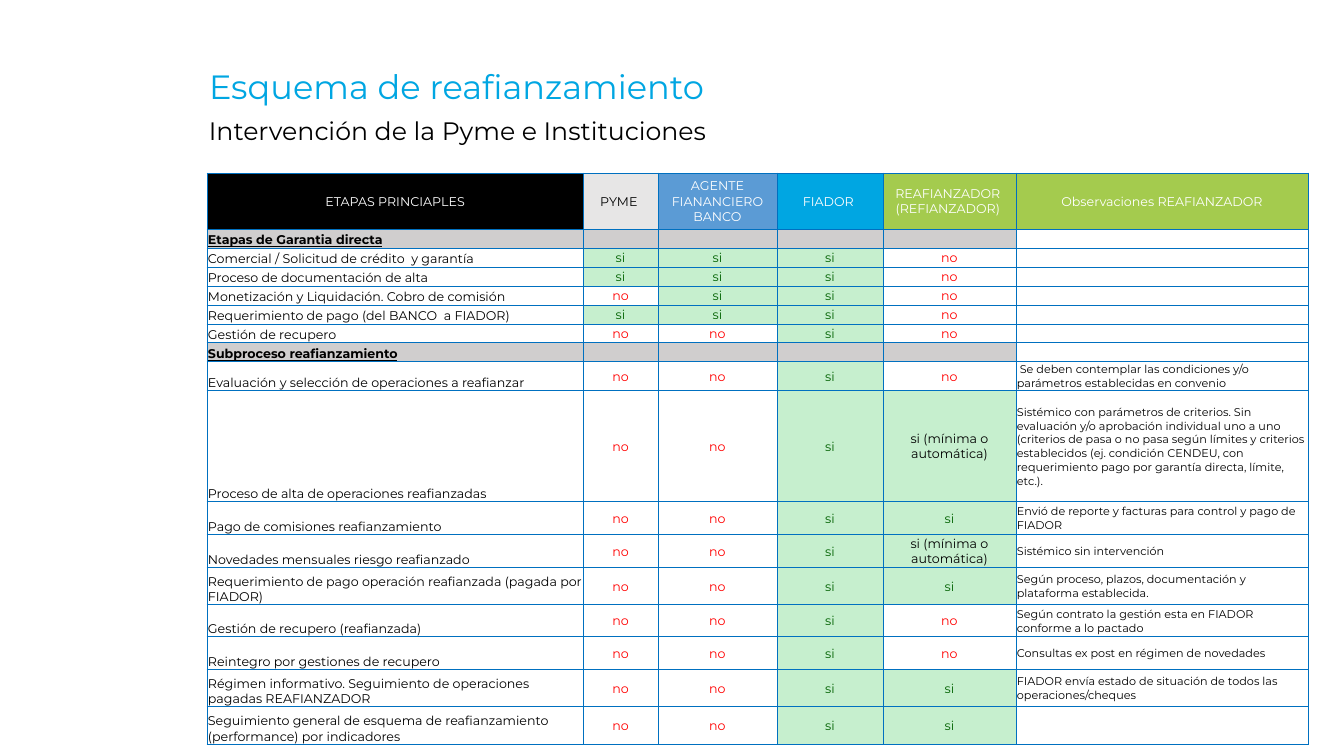
"""Build the slide on the counter-guarantee scheme."""
from dataclasses import dataclass

from lxml import etree
from pptx import Presentation
from pptx.dml.color import RGBColor
from pptx.enum import text as et
from pptx.oxml import ns
from pptx.util import Emu, Pt

SCALE = 914400 / 100.8


@dataclass(frozen=True)
class Theme:
    """Colours, type sizes and font of the slide."""
    face: str = "Montserrat"
    black: str = "000000"
    white: str = "FFFFFF"
    cyan: str = "00A6E2"
    blue: str = "5B9BD5"
    lime: str = "A4CB4E"
    pale: str = "E7E6E6"
    gray: str = "D0CECE"
    mint: str = "C6EFCE"
    green: str = "006100"
    red: str = "FF0000"
    edge: str = "0070C0"
    title: int = 24
    lead: int = 18
    body: int = 9
    note: int = 8


T = Theme()
MID, LOW = et.MSO_ANCHOR.MIDDLE, et.MSO_ANCHOR.BOTTOM
WIDTHS = [376, 75, 119, 106, 133, 292]
HEIGHTS = [56] + [19] * 7 + [29, 111, 33, 33, 37, 32, 33, 37, 38]
HEADS = [
    ("ETAPAS PRINCIAPLES", T.black, T.white),
    ("PYME ", T.pale, T.black),
    ("AGENTE FIANANCIERO BANCO", T.blue, T.white),
    ("FIADOR ", T.cyan, T.white),
    ("REAFIANZADOR  (REFIANZADOR) ", T.lime, T.white),
    ("Observaciones REAFIANZADOR", T.lime, T.white),
]
PART = "si (mínima o automática)"
STAGES = [
    ("Etapas de Garantia directa", None, ""),
    ("Comercial / Solicitud de crédito  y garantía", ["si", "si", "si", "no"], ""),
    ("Proceso de documentación de alta", ["si", "si", "si", "no"], ""),
    ("Monetización y Liquidación. Cobro de comisión", ["no", "si", "si", "no"], ""),
    ("Requerimiento de pago (del BANCO  a FIADOR)", ["si", "si", "si", "no"], ""),
    ("Gestión de recupero", ["no", "no", "si", "no"], ""),
    ("Subproceso reafianzamiento", None, ""),
    ("Evaluación y selección de operaciones a reafianzar", ["no", "no", "si", "no"],
     " Se deben contemplar las condiciones y/o parámetros establecidas en convenio"),
    ("Proceso de alta de operaciones reafianzadas", ["no", "no", "si", PART],
     "Sistémico con parámetros de criterios. Sin evaluación y/o aprobación individual "
     "uno a uno (criterios de pasa o no pasa según límites y criterios establecidos "
     "(ej. condición CENDEU, con requerimiento pago por garantía directa, límite, etc.)."),
    ("Pago de comisiones reafianzamiento", ["no", "no", "si", "si"],
     "Envió de reporte y facturas para control y pago de FIADOR"),
    ("Novedades mensuales riesgo reafianzado", ["no", "no", "si", PART],
     "Sistémico sin intervención"),
    ("Requerimiento de pago operación reafianzada (pagada por FIADOR)",
     ["no", "no", "si", "si"],
     "Según proceso, plazos, documentación y plataforma establecida."),
    ("Gestión de recupero (reafianzada)", ["no", "no", "si", "no"],
     "Según contrato la gestión esta en FIADOR conforme a lo pactado"),
    ("Reintegro por gestiones de recupero", ["no", "no", "si", "no"],
     "Consultas ex post en régimen de novedades"),
    ("Régimen informativo. Seguimiento de operaciones pagadas REAFIANZADOR",
     ["no", "no", "si", "si"],
     "FIADOR envía estado de situación de todos las operaciones/cheques"),
    ("Seguimiento general de esquema de reafianzamiento (performance) por indicadores",
     ["no", "no", "si", "si"], ""),
]


def px(num):
    """Turn pixels into EMU."""
    return Emu(round(num * SCALE))


def write(frame, words, size=T.body, color=T.black, bold=False, center=False):
    """Put one formatted paragraph into a text frame."""
    para = frame.paragraphs[0]
    para.alignment = et.PP_ALIGN.CENTER if center else et.PP_ALIGN.LEFT
    if not words:
        end = etree.SubElement(para._p, ns.qn("a:endParaRPr"))
        end.set("sz", str(size * 100))
        return
    run = para.add_run()
    run.text = words
    font = run.font
    font.name, font.size, font.bold, font.underline = T.face, Pt(size), bold, bold
    font.color.rgb = RGBColor.from_string(color)


def place(shape, left, top, width, height):
    """Move a text shape and anchor its wrapped text at the top."""
    shape.left, shape.top, shape.width, shape.height = map(px, (left, top, width, height))
    frame = shape.text_frame
    frame.word_wrap = True
    frame.vertical_anchor = et.MSO_ANCHOR.TOP
    return frame


def edge(cell):
    """Draw thin lines on the four sides of a cell."""
    props = cell._tc.get_or_add_tcPr()
    for side in ("lnL", "lnR", "lnT", "lnB"):
        line = etree.SubElement(props, ns.qn("a:" + side), w=str(Pt(0.5)))
        fill = etree.SubElement(line, ns.qn("a:solidFill"))
        etree.SubElement(fill, ns.qn("a:srgbClr"), val=T.edge)


def fill_cell(cell, words="", fill=None, anchor=MID, **style):
    """Set the text, margins, lines and fill of a cell."""
    cell.margin_left = cell.margin_right = cell.margin_top = px(1)
    cell.margin_bottom = 0
    cell.vertical_anchor = anchor
    edge(cell)
    if fill:
        cell.fill.solid()
        cell.fill.fore_color.rgb = RGBColor.from_string(fill)
    else:
        cell.fill.background()
    write(cell.text_frame, words, **style)


def mark(cell, words):
    """Colour a cell by its yes or no."""
    color = {"si": T.green, "no": T.red}.get(words, T.black)
    fill = None if words == "no" else T.mint
    fill_cell(cell, words, fill, color=color, center=True)


def fill_row(cells, name, marks, note):
    """Fill one stage, or a gray section row when it has no marks."""
    head = marks is None
    fill_cell(cells[0], name, T.gray if head else None, LOW, bold=head)
    for col in range(1, 5):
        if head:
            fill_cell(cells[col], fill=T.gray)
        else:
            mark(cells[col], marks[col - 1])
    fill_cell(cells[5], note, size=T.note)


def add_grid(slide):
    """Add the table of stages."""
    frame = slide.shapes.add_table(len(HEIGHTS), len(WIDTHS), px(207), px(173),
                                   px(sum(WIDTHS)), px(sum(HEIGHTS)))
    grid = frame.table
    grid.first_row = grid.horz_banding = False
    for col, width in zip(grid.columns, WIDTHS):
        col.width = px(width)
    for row, height in zip(grid.rows, HEIGHTS):
        row.height = px(height)
    rows = [list(row.cells) for row in grid.rows]
    for cell, (words, fill, color) in zip(rows[0], HEADS):
        fill_cell(cell, words, fill, color=color, center=True)
    for cells, stage in zip(rows[1:], STAGES):
        fill_row(cells, *stage)


def main():
    """Build and save the slide."""
    deck = Presentation()
    deck.slide_width, deck.slide_height = px(1344), px(756)
    slide = deck.slides.add_slide(deck.slide_layouts[5])
    write(place(slide.shapes.title, 199, 61, 559, 50),
          "Esquema de reafianzamiento", size=T.title, color=T.cyan)
    lead = slide.shapes.add_textbox(0, 0, 0, 0)
    write(place(lead, 199, 110, 600, 40),
          "Intervención de la Pyme e Instituciones", size=T.lead)
    add_grid(slide)
    deck.save("out.pptx")


if __name__ == "__main__":
    main()
